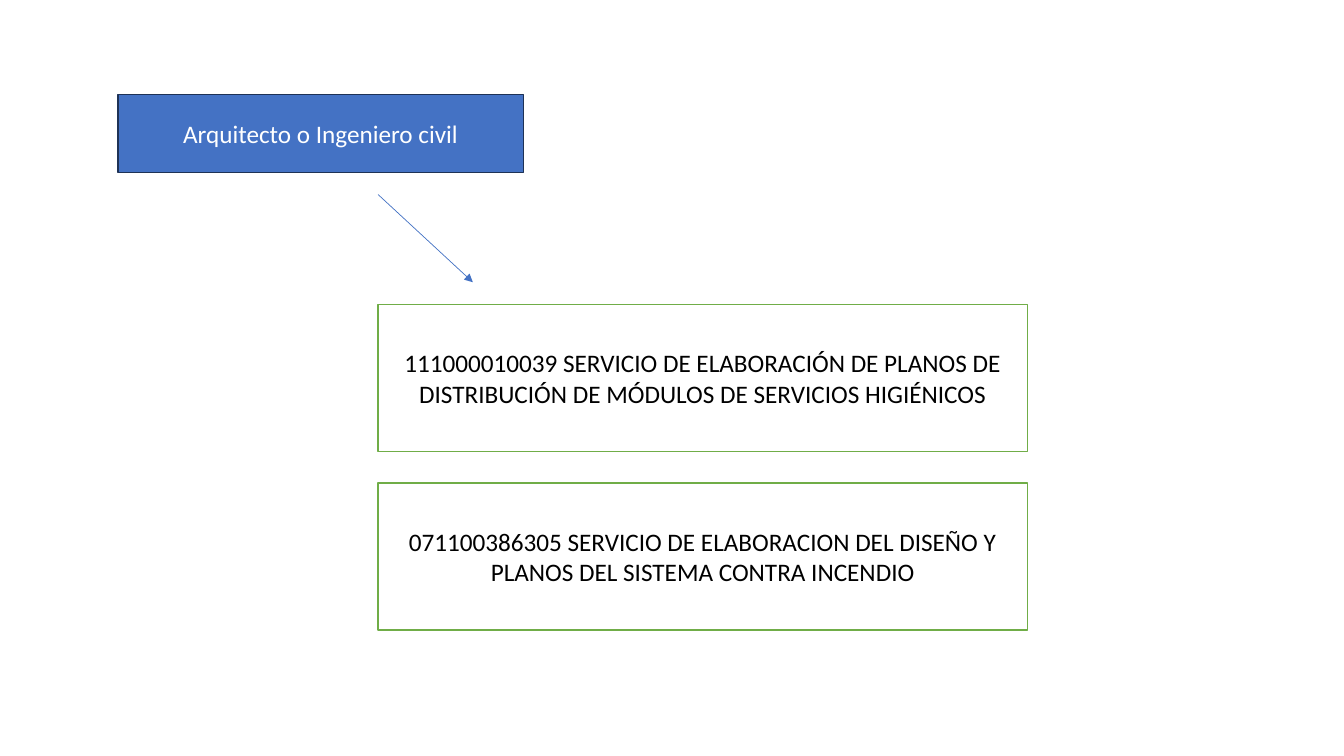
from dataclasses import dataclass

from lxml import etree
from pptx import Presentation
from pptx import util as u
from pptx.dml.color import RGBColor
from pptx.enum import shapes, text
from pptx.oxml import ns

BLUE = RGBColor(0x44, 0x72, 0xC4)
NAVY = RGBColor(0x1E, 0x32, 0x56)
GREEN = RGBColor(0x70, 0xAD, 0x47)
WHITE = RGBColor(0xFF, 0xFF, 0xFF)
BLACK = RGBColor(0x00, 0x00, 0x00)

# The slide is a grid of 1333 columns by 750 rows.
CELL = u.Inches(0.01)
COLS, ROWS = 1333, 750

LEFT = 375
TOP = 302
WIDE, HIGH = 644, 146
STEP = 177


@dataclass(frozen=True)
class Box:
    words: str
    col: int
    row: int
    cols: int
    rows: int
    fill: RGBColor
    edge: RGBColor
    ink: RGBColor


ROLE = Box("Arquitecto o Ingeniero civil", 117, 94, 402, 77, BLUE, NAVY, WHITE)
TASKS = (
    "111000010039 SERVICIO DE ELABORACIÓN DE PLANOS DE "
    "DISTRIBUCIÓN DE MÓDULOS DE SERVICIOS HIGIÉNICOS",
    "071100386305 SERVICIO DE ELABORACION DEL DISEÑO Y "
    "PLANOS DEL SISTEMA CONTRA INCENDIO",
)


def write(frame, words: str, *, size: float = 18, font: str = "Calibri",
          ink: RGBColor = BLACK) -> None:
    frame.word_wrap = True
    frame.vertical_anchor = text.MSO_ANCHOR.MIDDLE
    para = frame.paragraphs[0]
    para.alignment = text.PP_ALIGN.CENTER
    run = para.add_run()
    run.text = words
    run.font.size = u.Pt(size)
    run.font.name = font
    run.font.color.rgb = ink


def draw(slide, box: Box) -> None:
    shape = slide.shapes.add_shape(
        shapes.MSO_SHAPE.RECTANGLE, box.col * CELL, box.row * CELL,
        box.cols * CELL, box.rows * CELL)
    shape.shadow.inherit = False
    shape.fill.solid()
    shape.fill.fore_color.rgb = box.fill
    shape.line.color.rgb = box.edge
    shape.line.width = u.Pt(1)
    write(shape.text_frame, box.words, ink=box.ink)


def arrow(slide, start: tuple[int, int], end: tuple[int, int]) -> None:
    line = slide.shapes.add_connector(
        shapes.MSO_CONNECTOR.STRAIGHT,
        *(n * CELL for n in start + end))
    line.line.color.rgb = BLUE
    line.line.width = u.Pt(0.5)
    etree.SubElement(line.line._get_or_add_ln(), ns.qn("a:tailEnd"),
                     type="triangle")
    etree.SubElement(line._element.spPr, ns.qn("a:effectLst"))


def main() -> None:
    deck = Presentation()
    deck.slide_width, deck.slide_height = COLS * CELL, ROWS * CELL
    slide = deck.slides.add_slide(deck.slide_layouts[6])
    draw(slide, ROLE)
    arrow(slide, (LEFT, 193), (469, 280))
    for i, words in enumerate(TASKS):
        draw(slide, Box(words, LEFT, TOP + i * STEP, WIDE, HIGH,
                        WHITE, GREEN, BLACK))
    deck.save("out.pptx")


if __name__ == "__main__":
    main()
